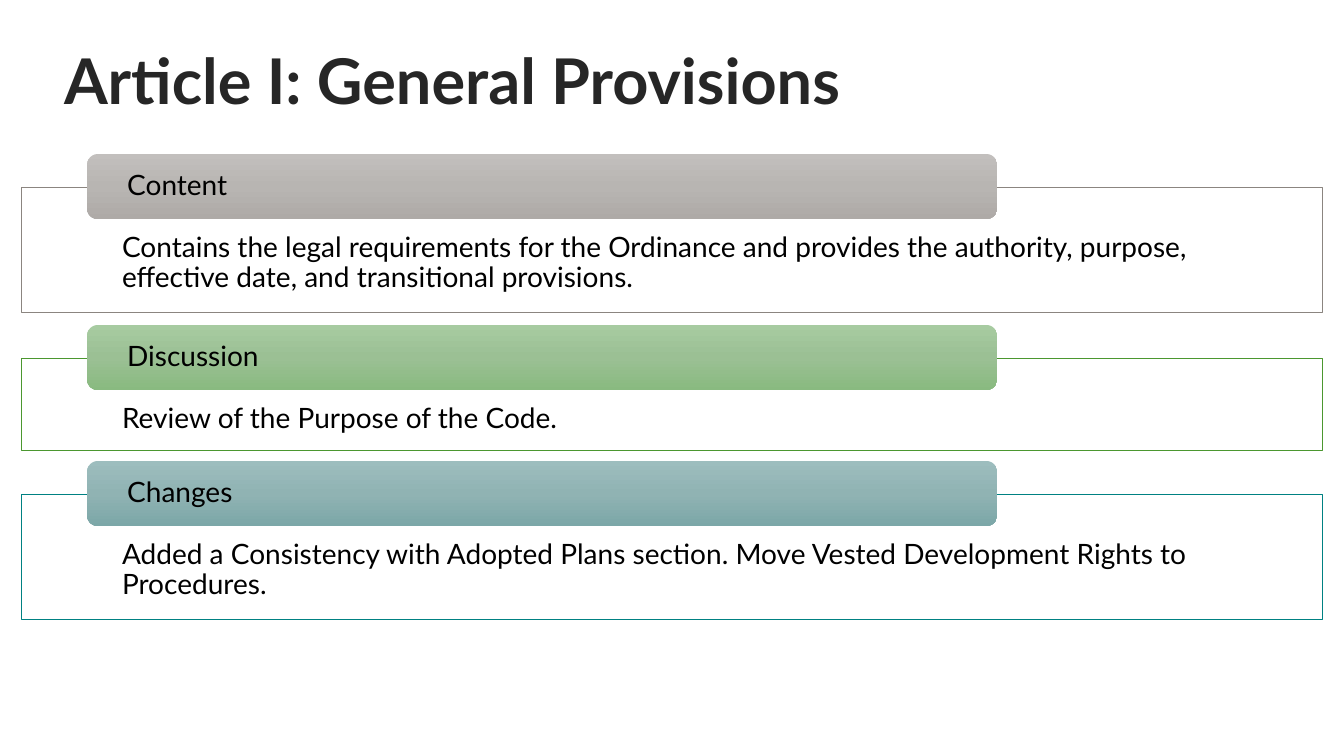
import copy

import pptx
import pptx.dml.color
import pptx.enum.shapes
import pptx.enum.text
import pptx.oxml
import pptx.oxml.ns
import pptx.util

PX = 914400 / 100.8
HUES = {
    "white": "FFFFFF", "black": "000000", "title": "262626",
    "gray": "8B8580", "gray1": "C2BFBD", "gray2": "B8B5B2", "gray3": "AEAAA7",
    "green": "4B972F", "green1": "A7CBA1", "green2": "9BC094", "green3": "89BA80",
    "teal": "008182", "teal1": "9DBDBE", "teal2": "90B3B3", "teal3": "7CA7A8",
}
PARTS = [
    ("Content", "Contains the legal requirements for the Ordinance and provides "
     "the authority, purpose, effective date, and transitional provisions.",
     187, 125, "gray"),
    ("Discussion", "Review of the Purpose of the Code.", 358, 92, "green"),
    ("Changes", "Added a Consistency with Adopted Plans section. "
     "Move Vested Development Rights to Procedures.", 494, 125, "teal"),
]


def px(*nums):
    return [pptx.util.Emu(round(num * PX)) for num in nums]


def hue(name):
    return pptx.dml.color.RGBColor.from_string(HUES[name])


class Deck:
    """Holds the style and current slide, and draws each kind of element."""

    font = "Lato"
    kinds = pptx.enum.shapes.MSO_SHAPE
    anchor = pptx.enum.text.MSO_ANCHOR

    def __init__(self):
        self.file = pptx.Presentation()
        self.file.slide_width = pptx.util.Inches(13.33)
        self.file.slide_height = pptx.util.Inches(7.5)
        self.slide = self.file.slides.add_slide(self.file.slide_layouts[5])

    def label(self, shape, text, size, color, anchor, pads, bold=False):
        frame = shape.text_frame
        frame.text = text
        frame.word_wrap = True
        frame.auto_size = pptx.enum.text.MSO_AUTO_SIZE.NONE
        frame.vertical_anchor = anchor
        (frame.margin_left, frame.margin_top,
         frame.margin_right, frame.margin_bottom) = px(*pads)
        para = frame.paragraphs[0]
        para.alignment = pptx.enum.text.PP_ALIGN.LEFT
        para.line_spacing = 0.9
        para.font.name = self.font
        para.font.size = pptx.util.Pt(size)
        para.font.bold = bold
        para.font.color.rgb = hue(color)

    def title(self, text, *spot):
        shape = self.slide.shapes.title
        shape.left, shape.top, shape.width, shape.height = px(*spot)
        self.label(shape, text, 45, "title", self.anchor.MIDDLE, (10, 5, 10, 5), True)

    def shape(self, kind, *spot):
        shape = self.slide.shapes.add_shape(kind, *px(*spot))
        shape.shadow.inherit = False
        return shape

    def box(self, text, color, *spot):
        shape = self.shape(self.kinds.RECTANGLE, *spot)
        shape.fill.solid()
        shape.fill.fore_color.rgb = hue("white")
        fill = shape._element.spPr.find(pptx.oxml.ns.qn("a:solidFill"))
        fill[0].append(pptx.oxml.parse_xml(
            f'<a:alpha {pptx.oxml.ns.nsdecls("a")} val="90000"/>'))
        shape.line.color.rgb = hue(color)
        shape.line.width = pptx.util.Pt(0.5)
        self.label(shape, text, 20, "black", self.anchor.TOP, (101, 46, 101, 16))

    def bar(self, text, color, *spot):
        shape = self.shape(self.kinds.ROUNDED_RECTANGLE, *spot)
        shape.line.fill.background()
        shape.fill.gradient()
        shape.fill.gradient_angle = 270
        stops = shape._element.spPr.find(".//" + pptx.oxml.ns.qn("a:gsLst"))
        stops.insert(1, copy.deepcopy(stops[0]))
        for step, stop in enumerate(shape.fill.gradient_stops):
            stop.position = step / 2
            stop.color.rgb = hue(f"{color}{step + 1}")
        self.label(shape, text, 20, "black", self.anchor.MIDDLE, (37, 0, 37, 0))


def main():
    deck = Deck()
    deck.title("Article I: General Provisions", 54, 31, 1159, 107)
    for head, text, top, high, color in PARTS:
        deck.box(text, color, 21, top, 1301, high)
        deck.bar(head, color, 87, top - 33, 910, 65)
    deck.file.save("out.pptx")


if __name__ == "__main__":
    main()
